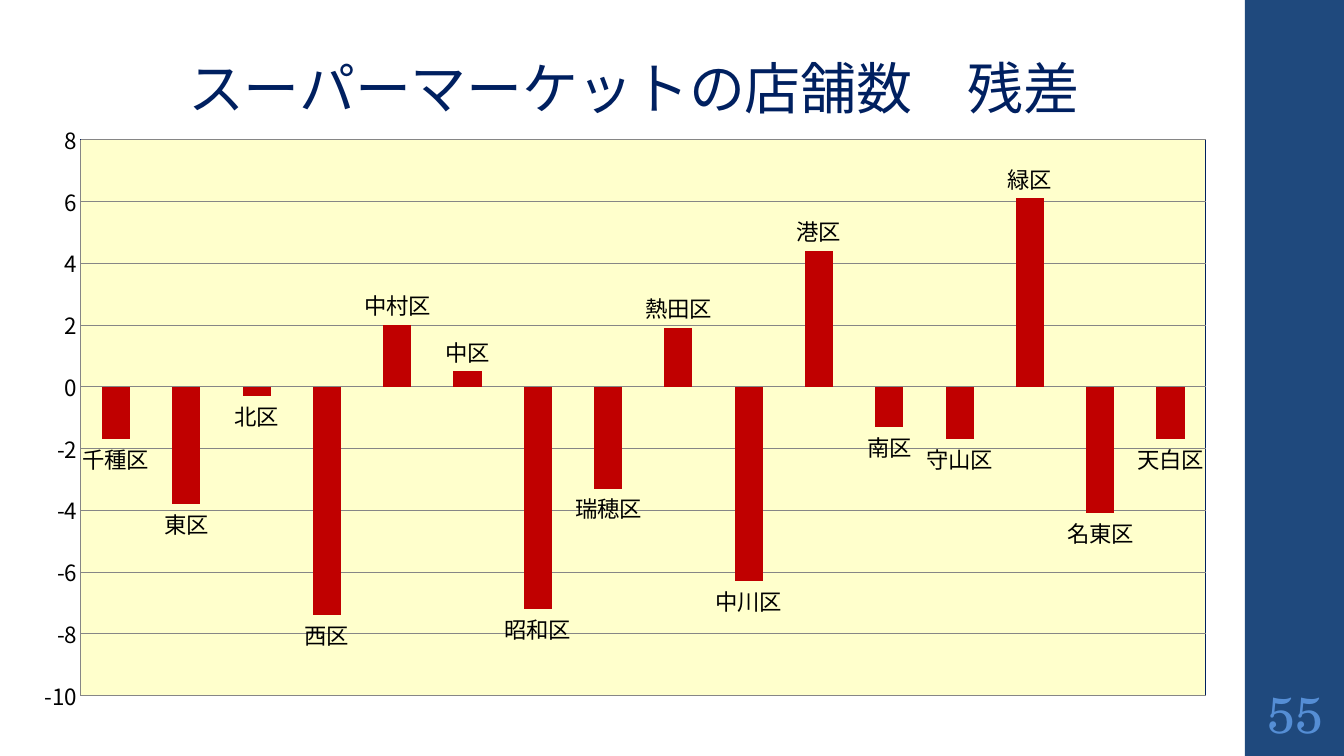
import pptx
import pptx.chart.data
import pptx.dml.color
import pptx.enum.chart
import pptx.enum.shapes
import pptx.enum.text
import pptx.oxml
import pptx.oxml.ns
import pptx.util

RGBColor = pptx.dml.color.RGBColor
Cm = pptx.util.Cm
qn = pptx.oxml.ns.qn

BLACK = RGBColor(0x00, 0x00, 0x00)
NAVY = RGBColor(0x00, 0x20, 0x60)
BAND_BLUE = RGBColor(0x1F, 0x49, 0x7D)
NUMBER_BLUE = RGBColor(0x55, 0x8E, 0xD5)
GRID_GRAY = RGBColor(0x86, 0x86, 0x86)
BAR_RED = RGBColor(0xC0, 0x00, 0x00)
PLOT_YELLOW = RGBColor(0xFF, 0xFF, 0xCC)

RESIDUALS = {
    "千種区": -1.7, "東区": -3.8, "北区": -0.3, "西区": -7.4,
    "中村区": 2, "中区": 0.5, "昭和区": -7.2, "瑞穂区": -3.3,
    "熱田区": 1.9, "中川区": -6.3, "港区": 4.4, "南区": -1.3,
    "守山区": -1.7, "緑区": 6.1, "名東区": -4.1, "天白区": -1.7,
}


class SlideBuilder:
    sans = "Noto Sans CJK JP"
    serif = "TeX Gyre Schola"

    def __init__(self, page):
        self.page = page

    def style_font(self, font, size, color, name):
        font.size = pptx.util.Pt(size)
        font.color.rgb = color
        font.name = name
        font.bold = False

    def band(self, left, top, width, height, color):
        shape = self.page.shapes.add_shape(
            pptx.enum.shapes.MSO_SHAPE.RECTANGLE,
            Cm(left), Cm(top), Cm(width), Cm(height))
        shape.shadow.inherit = False
        shape.fill.solid()
        shape.fill.fore_color.rgb = color
        shape.line.fill.background()

    def page_number(self, left, top, width, height, text):
        box = self.page.shapes.add_textbox(Cm(left), Cm(top), Cm(width), Cm(height))
        frame = box.text_frame
        frame.word_wrap = True
        frame.vertical_anchor = pptx.enum.text.MSO_ANCHOR.MIDDLE
        frame.margin_left = frame.margin_right = Cm(0.13)
        frame.margin_top = frame.margin_bottom = Cm(0.13)
        para = frame.paragraphs[0]
        para.text = text
        para.alignment = pptx.enum.text.PP_ALIGN.CENTER
        self.style_font(para.font, 36, NUMBER_BLUE, self.serif)

    def place(self, parent, index, target, **fractions):
        for layout in parent.findall(qn("c:layout")):
            parent.remove(layout)
        modes = "".join(f'<c:{key}Mode val="edge"/>' for key in "xy")
        sizes = "".join(f'<c:{key} val="{value}"/>' for key, value in fractions.items())
        parent.insert(index, pptx.oxml.parse_xml(
            f'<c:layout {pptx.oxml.ns.nsdecls("c")}><c:manualLayout>'
            f'{target}{modes}{sizes}</c:manualLayout></c:layout>'))

    def column_chart(self, left, top, width, height, title, values):
        data = pptx.chart.data.CategoryChartData(number_format="0.0")
        data.categories = list(values)
        data.add_series("残差", list(values.values()))
        chart = self.page.shapes.add_chart(
            pptx.enum.chart.XL_CHART_TYPE.COLUMN_CLUSTERED,
            Cm(left), Cm(top), Cm(width), Cm(height), data).chart
        self.style_font(chart.font, 10, BLACK, self.serif)
        chart.has_legend = False
        self.chart_title(chart, title)
        self.chart_axes(chart)
        self.chart_columns(chart)
        self.plot_area(chart)
        for latin in list(chart.element.iter(qn("a:latin"))):
            latin.addnext(pptx.oxml.parse_xml(
                f'<a:ea {pptx.oxml.ns.nsdecls("a")} typeface="{self.sans}"/>'))

    def chart_title(self, chart, title):
        chart.has_title = True
        para = chart.chart_title.text_frame.paragraphs[0]
        para.text = title
        self.style_font(para.font, 40, NAVY, self.sans)
        self.place(chart.element.find(".//" + qn("c:title")), 1, "", x=0.13, y=0.04)

    def chart_axes(self, chart):
        chart.category_axis.visible = False
        axis = chart.value_axis
        axis.minimum_scale, axis.maximum_scale, axis.major_unit = -10, 8, 2
        axis.major_tick_mark = pptx.enum.chart.XL_TICK_MARK.NONE
        axis.tick_labels.number_format = "0"
        axis.tick_labels.number_format_is_linked = False
        self.style_font(axis.tick_labels.font, 16, BLACK, self.sans)
        axis.has_major_gridlines = True
        for line in (axis.format.line, axis.major_gridlines.format.line):
            line.color.rgb = GRID_GRAY
            line.width = pptx.util.Pt(0.75)

    def chart_columns(self, chart):
        plot = chart.plots[0]
        plot.gap_width = 150
        plot.vary_by_categories = False
        series = plot.series[0]
        series.invert_if_negative = False
        series.format.fill.solid()
        series.format.fill.fore_color.rgb = BAR_RED
        labels = series.data_labels
        labels.show_category_name = True
        labels.show_value = False
        labels.position = pptx.enum.chart.XL_LABEL_POSITION.OUTSIDE_END
        self.style_font(labels.font, 16, BLACK, self.sans)

    def plot_area(self, chart):
        area = chart.element.find(".//" + qn("c:plotArea"))
        self.place(area, 0, '<c:layoutTarget val="inner"/>',
                   x=0.0495, y=0.1925, w=0.93, h=0.765)
        area.append(pptx.oxml.parse_xml(
            f'<c:spPr {pptx.oxml.ns.nsdecls("c", "a")}>'
            f'<a:solidFill><a:srgbClr val="{PLOT_YELLOW}"/></a:solidFill>'
            f'<a:ln w="9525"><a:solidFill><a:srgbClr val="{NAVY}"/></a:solidFill></a:ln>'
            '</c:spPr>'))


def main():
    deck = pptx.Presentation()
    deck.slide_width, deck.slide_height = Cm(33.87), Cm(19.05)
    builder = SlideBuilder(deck.slides.add_slide(deck.slide_layouts[6]))
    builder.band(31.37, 0, 2.5, 19.05, BAND_BLUE)
    builder.page_number(31.37, 17.15, 2.54, 1.65, "55")
    builder.column_chart(0.53, 0, 30.48, 18.31, "スーパーマーケットの店舗数　残差", RESIDUALS)
    deck.save("out.pptx")


if __name__ == "__main__":
    main()
